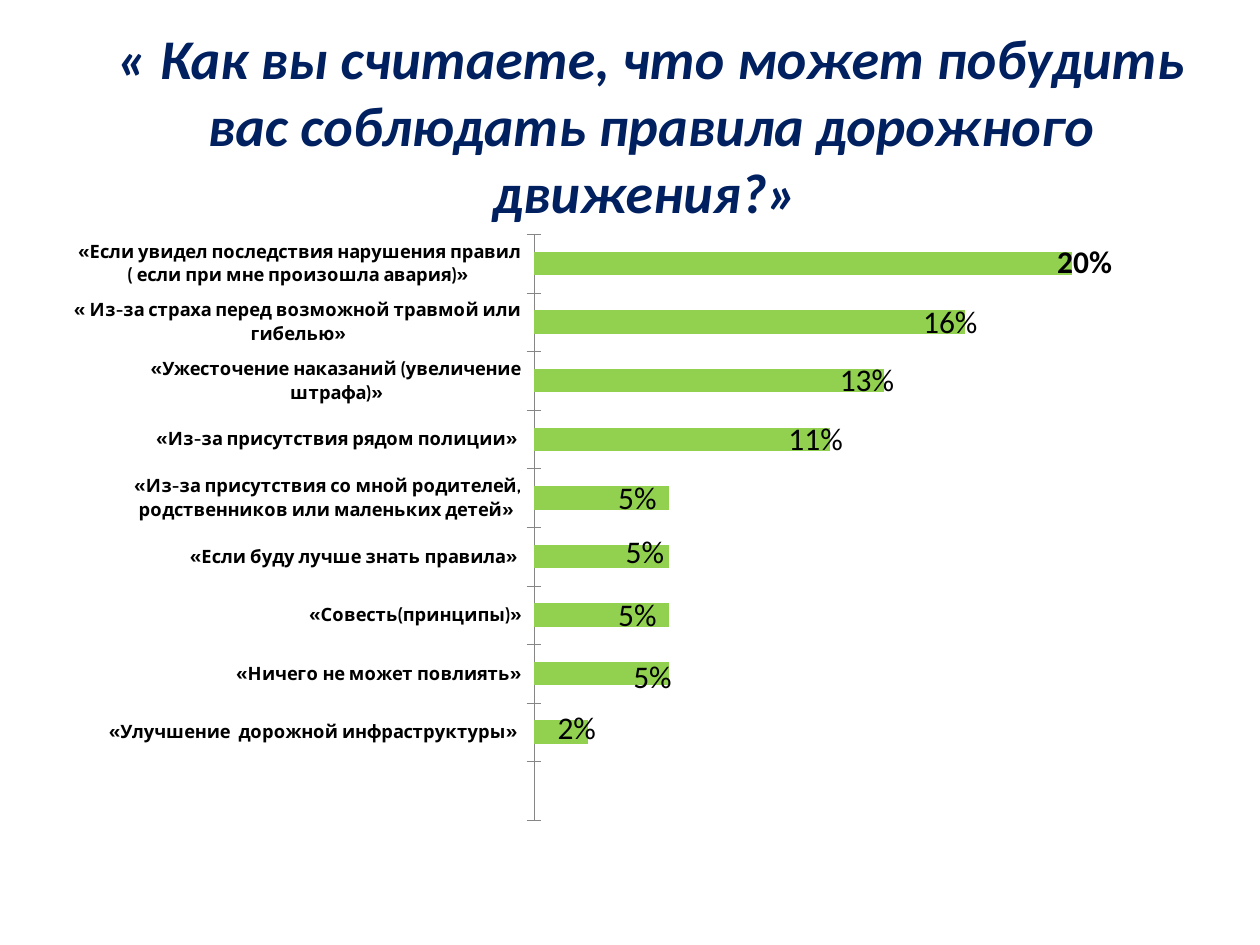
from lxml import etree
from pptx import Presentation
from pptx import util as u
from pptx.chart import data as chart_data
from pptx.dml import color
from pptx.enum import chart as ec, text
from pptx.oxml import ns

TITLE = "« Как вы считаете, что может побудить вас соблюдать правила дорожного движения?» "

# Answer, share, label shift in inches
ANSWERS = [
    ("", None, None),
    ("«Улучшение  дорожной инфраструктуры» ", 0.02, (-0.28, -0.03)),
    ("«Ничего не может повлиять»", 0.05, (-0.32, 0.03)),
    ("«Совесть(принципы)»", 0.05, (-0.44, 0)),
    ("«Если буду лучше знать правила» ", 0.05, (-0.38, -0.03)),
    ("«Из-за присутствия со мной родителей, родственников или маленьких детей» ", 0.05, (-0.44, 0)),
    ("«Из-за присутствия рядом полиции» ", 0.11, (-0.37, 0)),
    ("«Ужесточение наказаний (увеличение штрафа)»", 0.13, (-0.39, 0)),
    ("« Из-за страха перед возможной травмой или гибелью»", 0.16, (-0.37, 0)),
    ("«Если увидел последствия нарушения правил ( если при мне произошла авария)» ", 0.2, (-0.16, -0.01)),
]
CHART_BOX = (0.59, 1.7, 9, 4.95)
PLOT_BOX = (3.64, 0.16, 5.35, 4.65)  # inside the chart


def rgb(value):
    return color.RGBColor.from_string(value)


class SlideBuilder:
    title_format = dict(name="Calibri", size=u.Pt(32), bold=True, italic=True, color="002060")
    axis_format = dict(name="Cabin", size=u.Pt(10.5), bold=True, color="000000")
    label_format = dict(name="Calibri", size=u.Pt(18), bold=False, color="000000")
    chart_format = dict(name="Calibri", size=u.Pt(11), bold=True, color="376092")

    def __init__(self, slide):
        self.slide = slide

    def format_font(self, font, values):
        for key, value in values.items():
            if key == "color":
                font.color.rgb = rgb(value)
            else:
                setattr(font, key, value)

    def place_layout(self, parent, position, lengths, **modes):
        """Give parent a manual layout; lengths in inches become chart fractions."""
        layout = etree.Element(ns.qn("c:layout"))
        manual = etree.SubElement(layout, ns.qn("c:manualLayout"))
        fractions = {key: length / whole for key, length, whole
                     in zip("xywh", lengths, CHART_BOX[2:] * 2)}
        for key, value in {**modes, **fractions}.items():
            etree.SubElement(manual, ns.qn("c:" + key)).set("val", str(value))
        for old in parent.findall(ns.qn("c:layout")):
            parent.remove(old)
        parent.insert(position, layout)

    def add_title(self, wording, box):
        shape = self.slide.shapes.title
        shape.left, shape.top, shape.width, shape.height = map(u.Inches, box)
        frame = shape.text_frame
        frame.text = wording
        frame.word_wrap = True
        frame.auto_size = text.MSO_AUTO_SIZE.NONE
        frame.vertical_anchor = text.MSO_ANCHOR.MIDDLE
        paragraph = frame.paragraphs[0]
        paragraph.alignment = text.PP_ALIGN.CENTER
        self.format_font(paragraph.runs[0].font, self.title_format)

    def add_bar_chart(self, answers, box):
        source = chart_data.CategoryChartData(number_format="0%")
        source.categories = [answer for answer, _, _ in answers]
        source.add_series("Series 1", [share for _, share, _ in answers])
        chart = self.slide.shapes.add_chart(
            ec.XL_CHART_TYPE.BAR_CLUSTERED, *map(u.Inches, box), source).chart
        chart.has_legend = chart.has_title = False
        self.format_font(chart.font, self.chart_format)
        plot = chart.plots[0]
        plot.vary_by_categories = False
        plot.gap_width = 150
        self.place_layout(plot._element.getparent(), 0, PLOT_BOX,
                          layoutTarget="inner", xMode="edge", yMode="edge")

        # Axes
        axis = chart.category_axis
        axis.major_tick_mark = ec.XL_TICK_MARK.CROSS
        axis.format.line.color.rgb = rgb("868686")
        axis.format.line.width = u.Pt(0.25)
        self.format_font(axis.tick_labels.font, self.axis_format)
        axis = chart.value_axis
        axis.minimum_scale, axis.maximum_scale = 0, 0.25
        axis.has_major_gridlines = axis.visible = False
        axis.tick_labels.number_format = "0.00%"
        axis.tick_labels.number_format_is_linked = False

        # Bars and their labels
        series = plot.series[0]
        series.format.fill.solid()
        series.format.fill.fore_color.rgb = rgb("92D050")
        labels = series.data_labels
        labels.show_value = True
        labels.number_format = "0.0%"
        labels.number_format_is_linked = False
        self.format_font(labels.font, self.label_format)
        for leader in labels._element.findall(ns.qn("c:showLeaderLines")):
            leader.set("val", "0")
        largest = max(share for _, share, _ in answers if share)
        for index, (_, share, shift) in enumerate(answers):
            label = series.points[index].data_label
            label.position = ec.XL_LABEL_POSITION.OUTSIDE_END
            if share is not None:
                self.write_label(label, share, shift, share == largest)

    def write_label(self, label, share, shift, bold):
        label.text_frame.text = f"{share:.0%}"
        run = label.text_frame.paragraphs[0].runs[0]
        self.format_font(run.font, {**self.label_format, "bold": bold})
        element = run._r.getparent().getparent().getparent().getparent()
        self.place_layout(element, 1, shift)


def main():
    presentation = Presentation()
    presentation.slide_width, presentation.slide_height = u.Inches(10), u.Inches(7.5)
    builder = SlideBuilder(presentation.slides.add_slide(presentation.slide_layouts[5]))
    builder.add_title(TITLE, (0.67, 0.36, 9, 1.25))
    builder.add_bar_chart(ANSWERS, CHART_BOX)
    presentation.save("out.pptx")


if __name__ == "__main__":
    main()
